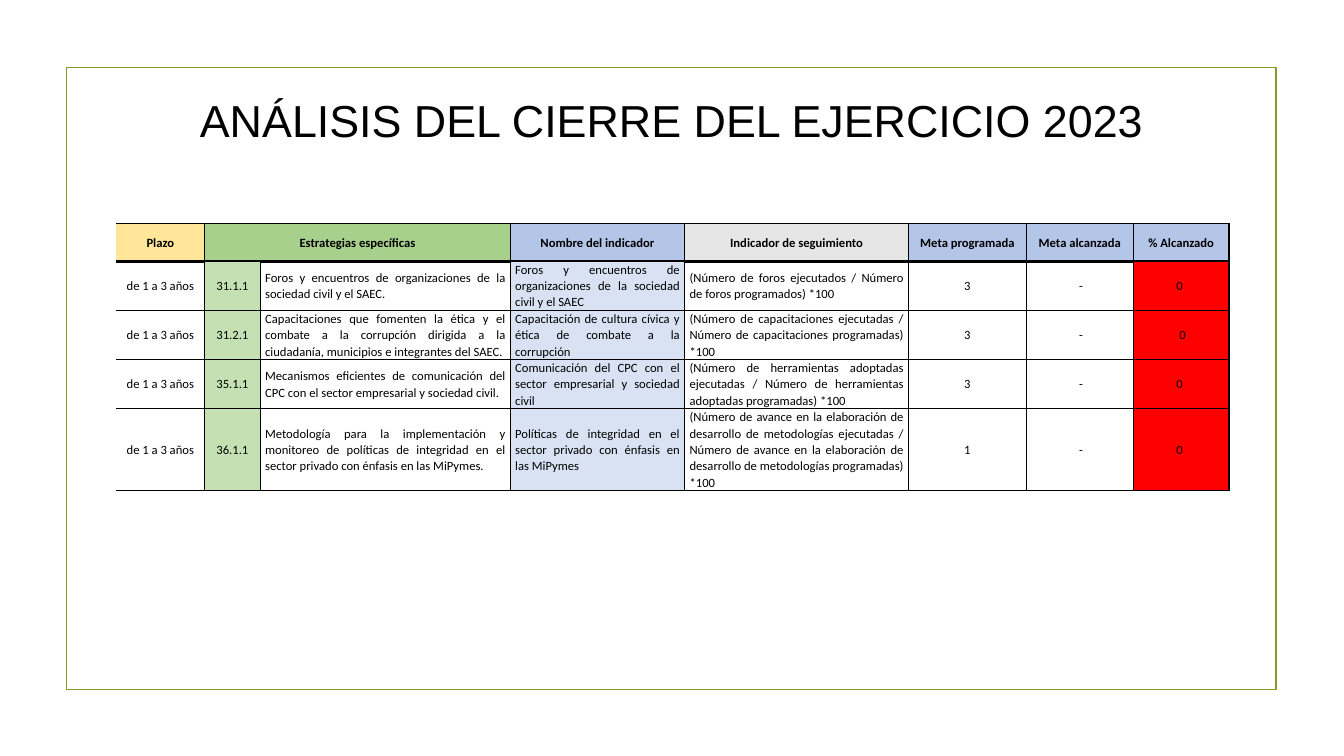
from lxml.etree import SubElement
from pptx import Presentation
from pptx.dml.color import RGBColor
from pptx.enum.shapes import MSO_SHAPE
from pptx.enum.text import MSO_ANCHOR, MSO_AUTO_SIZE, PP_ALIGN
from pptx.oxml.ns import qn
from pptx.util import Inches, Pt

COLORS = {
    "black": "000000",
    "frame": "83992A",
    "yellow": "FFE699",
    "green": "A8D08D",
    "light_green": "C5E0B3",
    "blue": "B4C6E7",
    "light_blue": "D9E2F3",
    "gray": "E7E6E6",
    "red": "FF0000",
}
TABLE_LEFT = 1.15
HEADER_WIDTHS = [0.88, 3.03, 1.73, 2.22, 1.17, 1.06, 0.95]
BODY_WIDTHS = [0.88, 0.55, 2.48] + HEADER_WIDTHS[2:]
HEADER_FILLS = ["yellow", "green", "blue", "gray", "blue", "blue", "blue"]
BODY_FILLS = [None, "light_green", None, "light_blue", None, None, None, "red"]
JUSTIFIED_COLUMNS = (2, 3, 4)

HEADERS = [
    "Plazo", "Estrategias específicas", "Nombre del indicador",
    "Indicador de seguimiento", "Meta programada", "Meta alcanzada", "% Alcanzado",
]
TERM = "de 1 a 3 años"
STRATEGIES = [
    [TERM, "31.1.1",
     "Foros y encuentros de organizaciones de la sociedad civil y el SAEC.",
     "Foros y encuentros de organizaciones de la sociedad civil y el SAEC",
     "(Número de foros ejecutados / Número de foros programados) *100",
     "3", " -", "0 "],
    [TERM, "31.2.1",
     "Capacitaciones que fomenten la ética y el combate a la corrupción dirigida a la "
     "ciudadanía, municipios e integrantes del SAEC.",
     "Capacitación de cultura cívica y ética de combate a la corrupción",
     "(Número de capacitaciones ejecutadas / Número de capacitaciones programadas) *100",
     "3", " -", " 0"],
    [TERM, "35.1.1",
     "Mecanismos eficientes de comunicación del CPC con el sector empresarial y sociedad civil.",
     "Comunicación del CPC con el sector empresarial y sociedad civil",
     "(Número de herramientas adoptadas ejecutadas / Número de herramientas adoptadas "
     "programadas) *100",
     "3", " -", "0 "],
    [TERM, "36.1.1",
     "Metodología para la implementación y monitoreo de políticas de integridad en el "
     "sector privado con énfasis en las MiPymes.",
     "Políticas de integridad en el sector privado con énfasis en las MiPymes",
     "(Número de avance en la elaboración de desarrollo de metodologías ejecutadas / "
     "Número de avance en la elaboración de desarrollo de metodologías programadas) *100",
     "1", " -", "0 "],
]


def color(name):
    return RGBColor.from_string(COLORS[name])


def format_span(span, font_name, size, bold=False):
    span.font.name = font_name
    span.font.size = Pt(size)
    span.font.bold = bold
    span.font.color.rgb = color("black")


def add_frame(page):
    frame = page.shapes.add_shape(
        MSO_SHAPE.RECTANGLE, Inches(0.66), Inches(0.67), Inches(12), Inches(6.17))
    frame.shadow.inherit = False
    frame.fill.background()
    frame.line.color.rgb = color("frame")
    frame.line.width = Pt(1.25)


def format_title(title, text):
    title.left, title.top = Inches(1.65), Inches(0.87)
    title.width, title.height = Inches(10.03), Inches(0.64)
    frame = title.text_frame
    frame.text = text
    frame.word_wrap = True
    frame.auto_size = MSO_AUTO_SIZE.NONE
    frame.vertical_anchor = MSO_ANCHOR.MIDDLE
    para = frame.paragraphs[0]
    para.alignment = PP_ALIGN.CENTER
    format_span(para.runs[0], "Arial", 32)


def add_borders(cell, sides):
    properties = cell._tc.get_or_add_tcPr()
    for side in "LRTB":
        line = SubElement(properties, qn(f"a:ln{side}"), w=str(Pt(1)))
        if side in sides:
            fill = SubElement(line, qn("a:solidFill"))
            SubElement(fill, qn("a:srgbClr"), val=COLORS["black"])
        else:
            SubElement(line, qn("a:noFill"))


def format_cell(cell, text, fill, sides, alignment, bold):
    cell.margin_left = cell.margin_right = Inches(0.05)
    cell.margin_top = cell.margin_bottom = 0
    cell.vertical_anchor = MSO_ANCHOR.MIDDLE
    # Borders come before the fill in the cell properties
    add_borders(cell, sides)
    if fill:
        cell.fill.solid()
        cell.fill.fore_color.rgb = color(fill)
    else:
        cell.fill.background()
    cell.text_frame.text = text
    para = cell.text_frame.paragraphs[0]
    para.alignment = alignment
    para.line_spacing = 1.07
    para.space_after = Pt(8)
    format_span(para.runs[0], "Calibri", 9, bold)


def add_grid(page, top, widths, heights, rows, fills, justified=(), bold=False):
    shape = page.shapes.add_table(
        len(rows), len(widths), Inches(TABLE_LEFT), Inches(top),
        Inches(sum(widths)), Inches(sum(heights)))
    table = shape.table
    table.first_row = False
    table.horz_banding = False
    for column, width in zip(table.columns, widths):
        column.width = Inches(width)
    for row, height, texts in zip(table.rows, heights, rows):
        row.height = Inches(height)
        for index, (cell, text, fill) in enumerate(zip(row.cells, texts, fills)):
            # The first column is open on the left
            sides = "LRTB" if index else "RTB"
            alignment = PP_ALIGN.JUSTIFY if index in justified else PP_ALIGN.CENTER
            format_cell(cell, text, fill, sides, alignment, bold)


def main():
    deck = Presentation()
    deck.slide_width, deck.slide_height = Inches(13.33), Inches(7.5)
    page = deck.slides.add_slide(deck.slide_layouts[5])

    # Frame and title
    add_frame(page)
    format_title(page.shapes.title, "ANÁLISIS DEL CIERRE DEL EJERCICIO 2023")

    # Header band and strategy rows
    add_grid(page, 2.22, HEADER_WIDTHS, [0.38], [HEADERS], HEADER_FILLS, bold=True)
    add_grid(page, 2.59, BODY_WIDTHS, [0.48, 0.48, 0.48, 0.81], STRATEGIES,
             BODY_FILLS, JUSTIFIED_COLUMNS)

    deck.save("out.pptx")


if __name__ == "__main__":
    main()
